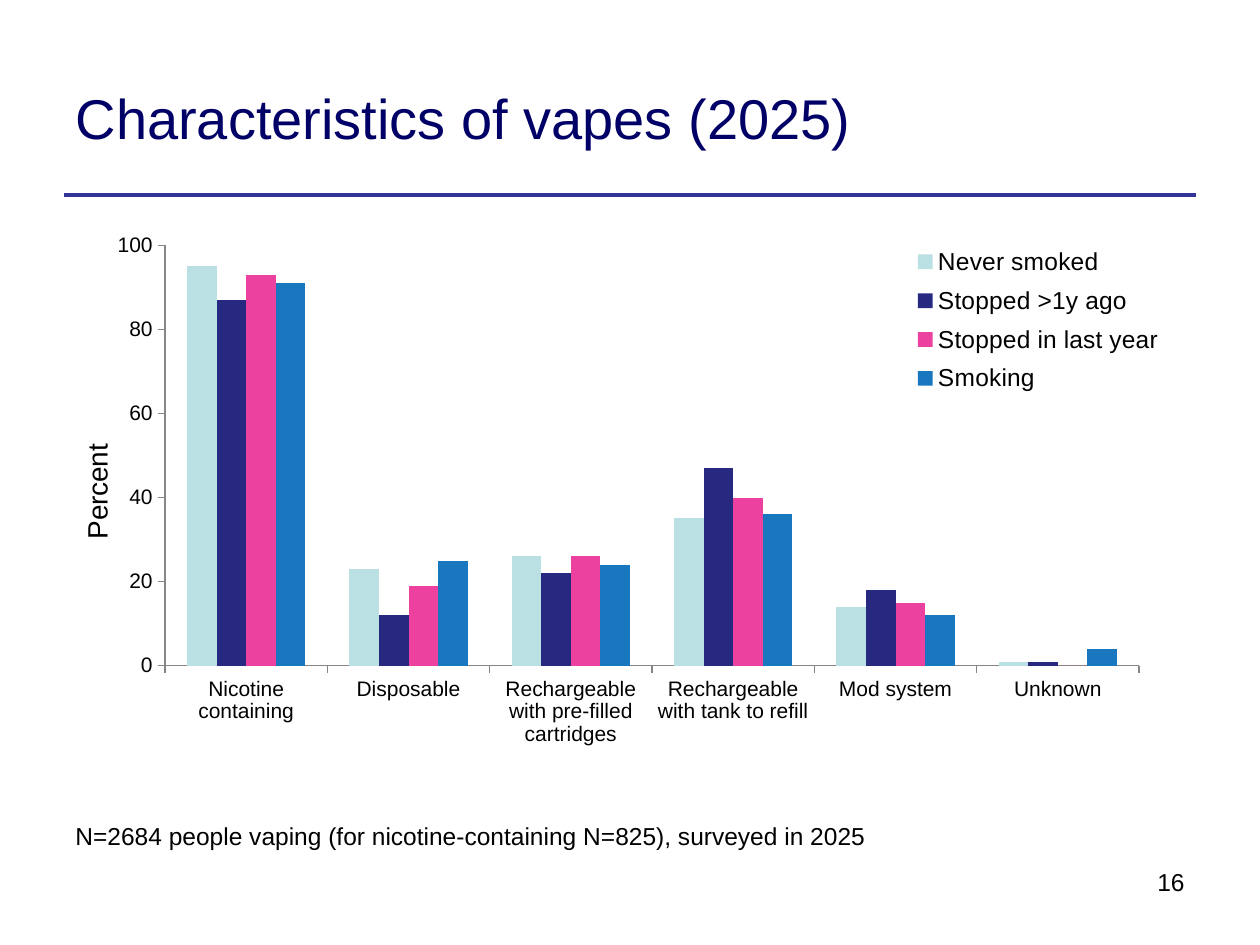
from lxml import etree
from pptx import Presentation
from pptx.chart.data import CategoryChartData
from pptx.dml.color import RGBColor
from pptx.enum.chart import XL_CHART_TYPE, XL_LEGEND_POSITION, XL_TICK_MARK
from pptx.enum.text import MSO_ANCHOR, PP_ALIGN
from pptx.oxml import parse_xml
from pptx.oxml.ns import nsdecls, qn
from pptx.util import Emu, Pt

COLUMNS = XL_CHART_TYPE.COLUMN_CLUSTERED
LEGEND_RIGHT = XL_LEGEND_POSITION.RIGHT
TICK_OUTSIDE = XL_TICK_MARK.OUTSIDE
TICK_NONE = XL_TICK_MARK.NONE
MIDDLE = MSO_ANCHOR.MIDDLE
TOP = MSO_ANCHOR.TOP
LEFT = PP_ALIGN.LEFT
RIGHT = PP_ALIGN.RIGHT

EMU_PER_PX = 914400 / 126
FONT = "Arial"
COLORS = {
    "title": "000066",
    "rule": "333399",
    "text": "000000",
    "axis": "868686",
}
CATEGORIES = [
    "Nicotine containing",
    "Disposable",
    "Rechargeable with pre-filled cartridges",
    "Rechargeable with tank to refill",
    "Mod system",
    "Unknown",
]
SERIES = [
    ("Never smoked", "BBE0E3", (95, 23, 26, 35, 14, 1)),
    ("Stopped >1y ago", "272880", (87, 12, 22, 47, 18, 1)),
    ("Stopped in last year", "EC419F", (93, 19, 26, 40, 15, 0)),
    ("Smoking", "1977C0", (91, 25, 24, 36, 12, 4)),
]


def px(length):
    return Emu(round(length * EMU_PER_PX))


def color(name):
    return RGBColor.from_string(COLORS[name])


def format_font(font, size, color_name="text"):
    font.name = FONT
    font.size = Pt(size)
    font.bold = False
    font.color.rgb = color(color_name)


def fill_text(shape, text, size, color_name="text", align=LEFT, anchor=TOP):
    frame = shape.text_frame
    frame.text = text
    frame.word_wrap = True
    frame.vertical_anchor = anchor
    paragraph = frame.paragraphs[0]
    paragraph.alignment = align
    format_font(paragraph.runs[0].font, size, color_name)


def add_header(slide, left, top, width, height):
    """Place the title and the rule that closes the header."""
    title = slide.shapes.title
    title.left, title.top = px(left), px(top)
    title.width, title.height = px(width - 140), px(height)
    fill_text(title, "Characteristics of vapes (2025)", 32, "title", anchor=MIDDLE)

    bottom = px(top + height - 1)
    rule = slide.shapes.add_connector(1, px(left + 1), bottom, px(left + width - 1), bottom)
    rule.line.color.rgb = color("rule")
    rule.line.width = Pt(2.25)
    etree.SubElement(rule._element.spPr, qn("a:effectLst"))


def set_layout(element, index, target="", **fractions):
    """Fix a chart part at fractions of the chart's size."""
    for old in element.findall(qn("c:layout")):
        element.remove(old)
    inner = f'<c:layoutTarget val="{target}"/>' if target else ""
    modes = "".join(f'<c:{key}Mode val="edge"/>' for key in "xy")
    values = "".join(f'<c:{key} val="{value}"/>' for key, value in fractions.items())
    element.insert(index, parse_xml(
        f'<c:layout {nsdecls("c")}><c:manualLayout>{inner}{modes}{values}'
        "</c:manualLayout></c:layout>"
    ))


def format_axes(chart):
    for axis in (chart.category_axis, chart.value_axis):
        axis.has_major_gridlines = False
        axis.major_tick_mark = TICK_OUTSIDE
        axis.minor_tick_mark = TICK_NONE
        axis.format.line.color.rgb = color("axis")
        axis.format.line.width = Pt(0.75)
        format_font(axis.tick_labels.font, 12)

    value_axis = chart.value_axis
    value_axis.minimum_scale = 0
    value_axis.maximum_scale = 100
    value_axis.major_unit = 20
    title = value_axis.axis_title
    title.text_frame.text = "Percent"
    format_font(title.text_frame.paragraphs[0].runs[0].font, 16)
    set_layout(title._element, 1, x=0.01, y=0.37)


def add_vape_chart(slide, left, top, width, height):
    data = CategoryChartData()
    data.categories = CATEGORIES
    for name, _, values in SERIES:
        data.add_series(name, values)
    frame = slide.shapes.add_chart(COLUMNS, px(left), px(top), px(width), px(height), data)
    chart = frame.chart
    chart.has_title = False
    format_font(chart.font, 18)

    plot = chart.plots[0]
    plot.gap_width = 150
    plot.overlap = 0
    plot.vary_by_categories = False
    for series, (_, fill, _) in zip(plot.series, SERIES):
        series.format.fill.solid()
        series.format.fill.fore_color.rgb = RGBColor.from_string(fill)
    format_axes(chart)

    chart.has_legend = True
    legend = chart.legend
    legend.position = LEGEND_RIGHT
    legend.include_in_layout = False
    format_font(legend.font, 14)
    set_layout(legend._element, 1, x=0.74, y=0.03, w=0.24, h=0.28)
    plot_area = chart._chartSpace.chart.plotArea
    set_layout(plot_area, 0, "inner", x=0.09, y=0.044, w=0.859, h=0.707)


def add_footer(slide, left, top, width):
    """Place the sample note with the slide number below it at the right."""
    note = slide.shapes.add_textbox(px(left), px(top), px(948), px(43))
    fill_text(note, "N=2684 people vaping (for nicotine-containing N=825), surveyed in 2025", 14)
    number_width = 349
    number = slide.shapes.add_textbox(
        px(left + width - number_width), px(top + 46), px(number_width), px(66))
    fill_text(number, "16", 14, align=RIGHT)


def main():
    presentation = Presentation()
    presentation.slide_width, presentation.slide_height = px(1260), px(945)
    slide = presentation.slides.add_slide(presentation.slide_layouts[5])
    left, width = 63, 1134
    add_header(slide, left, 38, width, 158)
    add_vape_chart(slide, left, 219, width, 595)
    add_footer(slide, left, 815, width)
    presentation.save("out.pptx")


if __name__ == "__main__":
    main()
